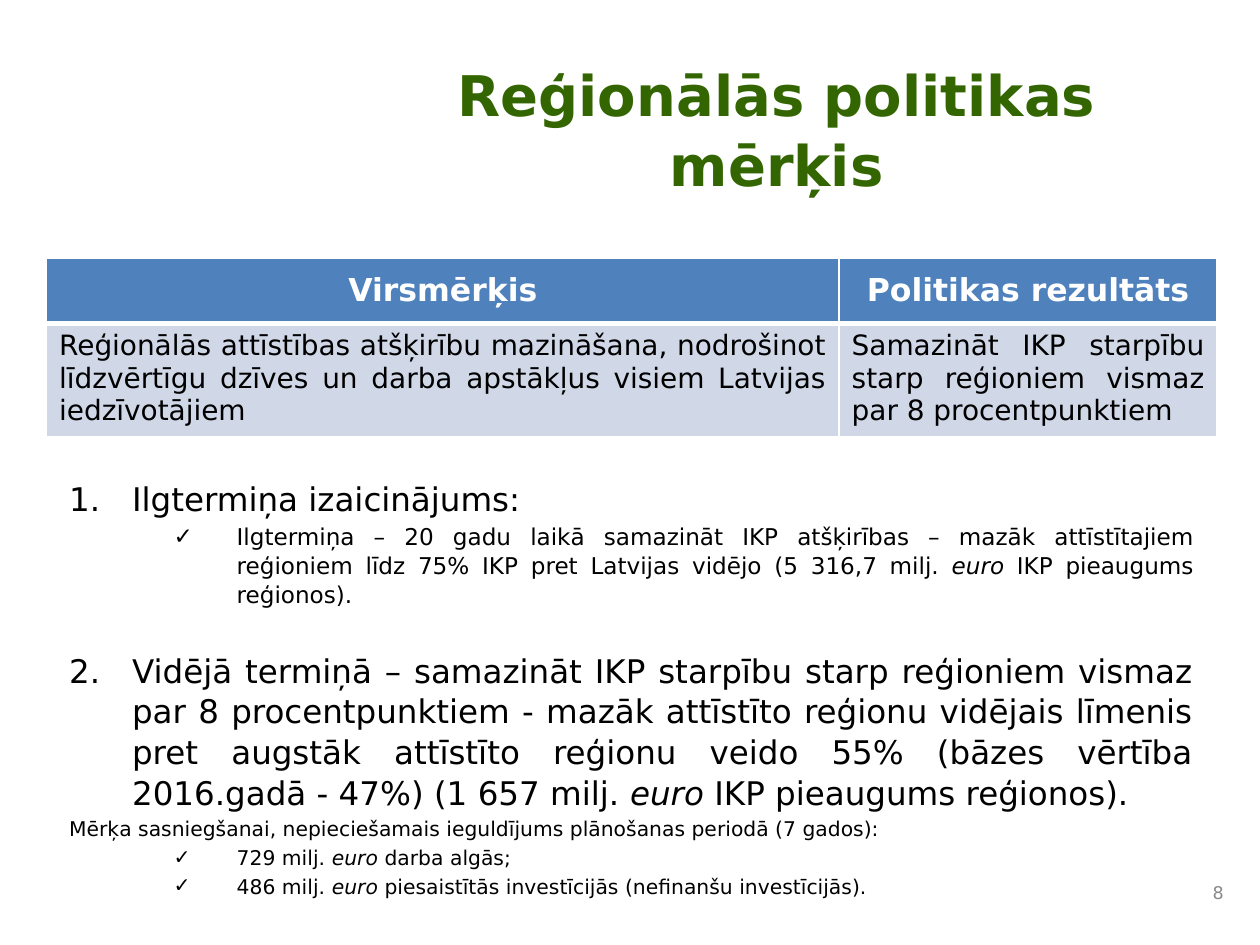
import pptx
import pptx.util
import pptx.dml.color
import pptx.enum.text
import pptx.oxml
import pptx.oxml.ns
from lxml import etree

Inches, Pt = pptx.util.Inches, pptx.util.Pt
ALIGN = pptx.enum.text.PP_ALIGN
ANCHOR = pptx.enum.text.MSO_ANCHOR
qn = pptx.oxml.ns.qn
FONT = "DejaVu Sans"
COLORS = {
    "title": "336600",
    "text": "000000",
    "header": "4F81BD",
    "cell": "D0D8E8",
    "white": "FFFFFF",
    "number": "898989",
}


def add_run(p, text, size, color, bold=False, italic=False):
    r = p.add_run()
    r.text = text
    r.font.name = FONT
    r.font.size = Pt(size)
    r.font.bold = bold
    r.font.italic = italic
    r.font.color.rgb = pptx.dml.color.RGBColor.from_string(COLORS[color])


def add_box(slide, left, top, width, height, anchor):
    tf = slide.shapes.add_textbox(
        Inches(left), Inches(top), Inches(width), Inches(height)).text_frame
    tf.word_wrap = True
    tf.vertical_anchor = anchor
    return tf


prs = pptx.Presentation()
prs.slide_width, prs.slide_height = Inches(10), Inches(7.5)
s = prs.slides.add_slide(prs.slide_layouts[6])

# Title
tf = add_box(s, 2.83, 0.45, 6.67, 1.13, ANCHOR.MIDDLE)
p = tf.paragraphs[0]
p.alignment = ALIGN.CENTER
p.line_spacing = 1.04
add_run(p, "Reģionālās politikas mērķis", 32, "title", bold=True)

# Goal and result table
rows = [
    ["Virsmērķis", "Politikas rezultāts"],
    ["Reģionālās attīstības atšķirību mazināšana, nodrošinot līdzvērtīgu "
     "dzīves un darba apstākļus visiem Latvijas iedzīvotājiem",
     "Samazināt IKP starpību starp reģioniem vismaz par 8 procentpunktiem"],
]
table = s.shapes.add_table(
    2, 2, Inches(0.37), Inches(2.05), Inches(9.29), Inches(1.38)).table
table.horz_banding = False
for column, width in zip(table.columns, (6.29, 3)):
    column.width = Inches(width)
for row, height in zip(table.rows, (0.52, 0.86)):
    row.height = Inches(height)

for i, texts in enumerate(rows):
    header = i == 0
    for j, text in enumerate(texts):
        cell = table.cell(i, j)
        cell.vertical_anchor = ANCHOR.MIDDLE if header else ANCHOR.TOP
        p = cell.text_frame.paragraphs[0]
        p.alignment = ALIGN.CENTER if header else ALIGN.JUSTIFY
        add_run(p, text, 18 if header else 16,
                "white" if header else "text", bold=header)
        # Borders come before the fill in the cell properties
        tcPr = cell._tc.get_or_add_tcPr()
        for side in ("L", "R", "T", "B"):
            thick = (header and side == "B") or (not header and side == "T")
            ln = etree.SubElement(tcPr, qn(f"a:ln{side}"),
                                  w=str(Pt(3 if thick else 1)))
            fill = etree.SubElement(ln, qn("a:solidFill"))
            etree.SubElement(fill, qn("a:srgbClr"), val=COLORS["white"])
        cell.fill.solid()
        cell.fill.fore_color.rgb = pptx.dml.color.RGBColor.from_string(
            COLORS["header" if header else "cell"])

# Challenges: kind, size, space before, runs (every second run is italic)
items = [
    (1, 18.6, 0, ["Ilgtermiņa izaicinājums:"]),
    ("✓", 13.2, 2, [
        "Ilgtermiņa – 20 gadu laikā samazināt IKP atšķirības – mazāk "
        "attīstītajiem reģioniem līdz 75% IKP pret Latvijas vidējo "
        "(5 316,7 milj. ", "euro", " IKP pieaugums reģionos)."]),
    (2, 18.6, 23.6, [
        "Vidējā termiņā – samazināt IKP starpību starp reģioniem vismaz par "
        "8 procentpunktiem - mazāk attīstīto reģionu vidējais līmenis pret "
        "augstāk attīstīto reģionu veido 55% (bāzes vērtība 2016.gadā - 47%) "
        "(1 657 milj. ", "euro", " IKP pieaugums reģionos)."]),
    (None, 11.6, 2, [
        "Mērķa sasniegšanai, nepieciešamais ieguldījums plānošanas periodā "
        "(7 gados):"]),
    ("✓", 11.6, 2, ["729 milj. ", "euro ", "darba algās;"]),
    ("✓", 11.6, 2, ["486 milj. ", "euro ",
                    "piesaistītās investīcijās (nefinanšu investīcijās)."]),
]
tf = add_box(s, 0.45, 3.74, 9.12, 3.26, ANCHOR.TOP)
for i, (kind, size, before, texts) in enumerate(items):
    p = tf.add_paragraph() if i else tf.paragraphs[0]
    pPr = p._p.get_or_add_pPr()
    if kind:
        check = kind == "✓"
        pPr.set("marL", str(Inches(1.33 if check else 0.5)))
        pPr.set("indent", str(Inches(-0.5)))
        etree.SubElement(pPr, qn("a:buFont"), typeface=FONT)
        if check:
            p.level = 1
            etree.SubElement(pPr, qn("a:buChar"), char=kind)
        else:
            etree.SubElement(pPr, qn("a:buAutoNum"),
                             type="arabicPeriod", startAt=str(kind))
    p.alignment = ALIGN.JUSTIFY
    p.line_spacing = 1.04
    p.space_before = Pt(before)
    for k, text in enumerate(texts):
        add_run(p, text, size, "text", italic=k % 2 == 1)

# Slide number
tf = add_box(s, 9.33, 6.92, 0.48, 0.33, ANCHOR.MIDDLE)
p = tf.paragraphs[0]
p.alignment = ALIGN.RIGHT
add_run(p, "8", 10, "number")

prs.save("out.pptx")
